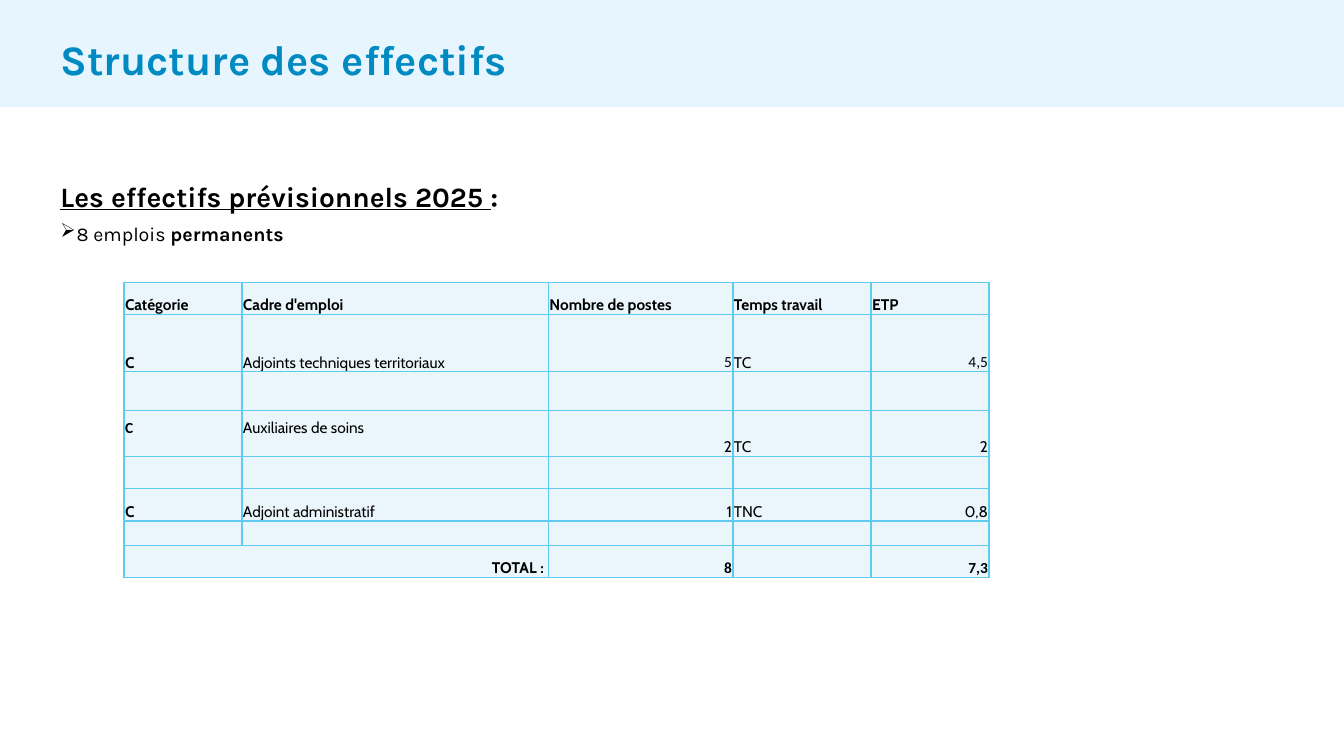
from lxml import etree
from pptx import Presentation
from pptx.dml.color import RGBColor
from pptx.enum.shapes import MSO_SHAPE
from pptx.enum.text import MSO_ANCHOR, PP_ALIGN
from pptx.oxml.ns import qn
from pptx.util import Inches, Pt

TITLE = "Structure des effectifs"
HEADING = ("Les effectifs prévisionnels 2025 ", ":")
BULLET = ("8 emplois ", "permanents")
HEADERS = ["Catégorie", "Cadre d'emploi", "Nombre de postes", "Temps travail", "ETP"]
EMPTY = [""] * len(HEADERS)
ROWS = [
    HEADERS,
    ["C", "Adjoints techniques territoriaux", "5", "TC", "4,5"],
    EMPTY,
    ["C", "Auxiliaires de soins", "2", "TC", "2"],
    EMPTY,
    ["C", "Adjoint administratif", "1", "TNC", "0,8"],
    EMPTY,
    ["TOTAL : ", "", "8", "", "7,3"],
]
HEADER_ROW, AIDES_ROW, TOTAL_ROW = 0, 3, len(ROWS) - 1
NUMBER_COLUMNS = (2, 4)
CALIBRI_CELLS = {(1, 2), (1, 4), (3, 0), (7, 2), (7, 4)}
COLUMN_WIDTHS = [1.17, 3.04, 1.83, 1.37, 1.17]
ROW_HEIGHTS = [0.32, 0.57, 0.38, 0.46, 0.32, 0.32, 0.24, 0.32]
COLORS = {"band": "E6F5FE", "title": "008AC2", "text": "000000",
          "cell": "EAF6FC", "border": "5FCBEF"}
LEFT = 0.56


def color(name):
    return RGBColor.from_string(COLORS[name])


def add_span(para, text, size, font="Karla", tint="text", bold=False, underline=False):
    span = para.add_run()
    span.text = text
    span.font.name = font
    span.font.size = Pt(size)
    span.font.bold = bold
    span.font.underline = underline
    span.font.color.rgb = color(tint)


def set_margins(target, left, top, right, bottom):
    target.margin_left, target.margin_top = Inches(left), Inches(top)
    target.margin_right, target.margin_bottom = Inches(right), Inches(bottom)


def add_bullet(para, symbol, indent):
    properties = para._p.get_or_add_pPr()
    properties.set("marL", str(Inches(indent)))
    properties.set("indent", str(-Inches(indent)))
    etree.SubElement(properties, qn("a:buChar")).set("char", symbol)


def set_borders(cell):
    """Draw a one point line on the four sides; lines must precede the fill."""
    properties = cell._tc.get_or_add_tcPr()
    for position, side in enumerate(("a:lnL", "a:lnR", "a:lnT", "a:lnB")):
        line = etree.Element(qn(side), w=str(Pt(1)))
        fill = etree.SubElement(line, qn("a:solidFill"))
        etree.SubElement(fill, qn("a:srgbClr"), val=COLORS["border"])
        properties.insert(position, line)


def add_title(page, deck):
    band = page.shapes.add_shape(MSO_SHAPE.RECTANGLE, 0, 0, deck.slide_width, Inches(1.06))
    band.shadow.inherit = False
    band.fill.solid()
    band.fill.fore_color.rgb = color("band")
    band.line.fill.background()
    page.shapes._spTree.insert(2, band._element)

    title = page.shapes.title
    title.left, title.top = Inches(LEFT), Inches(0.33)
    title.width, title.height = Inches(12.2), Inches(0.5)
    frame = title.text_frame
    set_margins(frame, 0.04, 0, 0.04, 0)
    frame.vertical_anchor = MSO_ANCHOR.MIDDLE
    para = frame.paragraphs[0]
    para.alignment = PP_ALIGN.LEFT
    add_span(para, TITLE, 30, tint="title", bold=True)


def add_intro(page):
    box = page.shapes.add_textbox(Inches(LEFT), Inches(1.78), Inches(12.09), Inches(0.66))
    frame = box.text_frame
    frame.word_wrap = True
    set_margins(frame, 0.04, 0, 0.04, 0)
    heading = frame.paragraphs[0]
    add_span(heading, HEADING[0], 20, bold=True, underline=True)
    add_span(heading, HEADING[1], 20, bold=True)
    item = frame.add_paragraph()
    item.space_before = Pt(6)
    add_bullet(item, "➢", 0.16)
    add_span(item, BULLET[0], 14)
    add_span(item, BULLET[1], 14, bold=True)


def fill_cell(cell, row, column, text):
    cell.fill.solid()
    cell.fill.fore_color.rgb = color("cell")
    set_borders(cell)
    cell.vertical_anchor = MSO_ANCHOR.BOTTOM
    raised = row == AIDES_ROW and column < 2
    set_margins(cell, 0.01, 0.01, 0.01, 0.19 if raised else 0)
    para = cell.text_frame.paragraphs[0]
    if not text:
        etree.SubElement(para._p, qn("a:endParaRPr"), sz="1100")
        return
    is_number = column in NUMBER_COLUMNS and row != HEADER_ROW
    if is_number or (row, column) == (TOTAL_ROW, 0):
        para.alignment = PP_ALIGN.RIGHT
    add_span(para, text, 11,
             font="Calibri" if (row, column) in CALIBRI_CELLS else "Cabin",
             bold=column == 0 or row in (HEADER_ROW, TOTAL_ROW))


def add_staff_table(page):
    frame = page.shapes.add_table(len(ROWS), len(HEADERS), Inches(1.23), Inches(2.8),
                                  Inches(sum(COLUMN_WIDTHS)), Inches(sum(ROW_HEIGHTS)))
    table = frame.table
    table.first_row = table.horz_banding = False
    for column, width in zip(table.columns, COLUMN_WIDTHS):
        column.width = Inches(width)
    for row, height in zip(table.rows, ROW_HEIGHTS):
        row.height = Inches(height)
    for row, texts in enumerate(ROWS):
        for column, text in enumerate(texts):
            fill_cell(table.cell(row, column), row, column, text)
    table.cell(TOTAL_ROW, 0).merge(table.cell(TOTAL_ROW, 1))


def main():
    deck = Presentation()
    deck.slide_width, deck.slide_height = Inches(13.33), Inches(7.5)
    page = deck.slides.add_slide(deck.slide_layouts[5])
    add_title(page, deck)
    add_intro(page)
    add_staff_table(page)
    deck.save("out.pptx")


if __name__ == "__main__":
    main()
